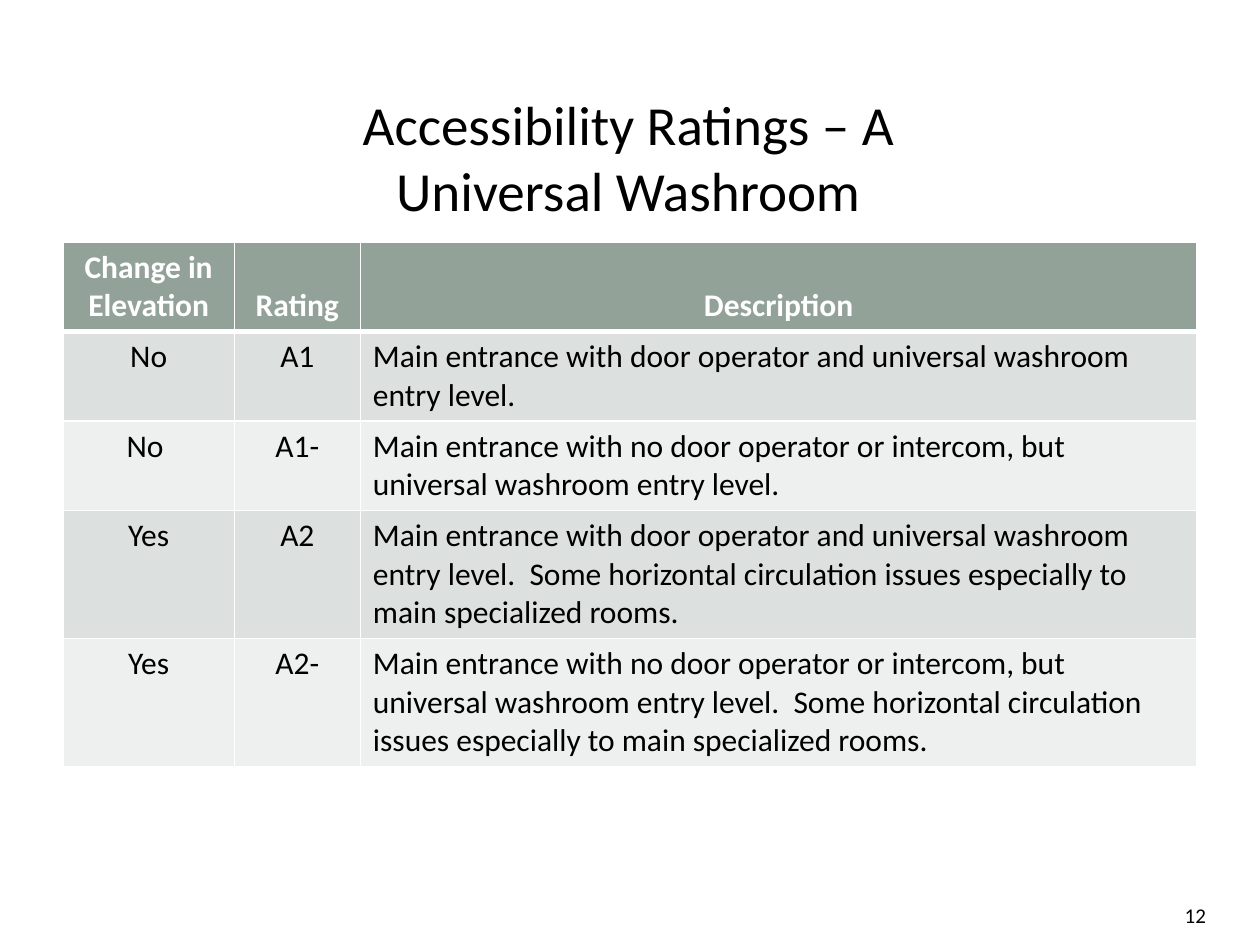
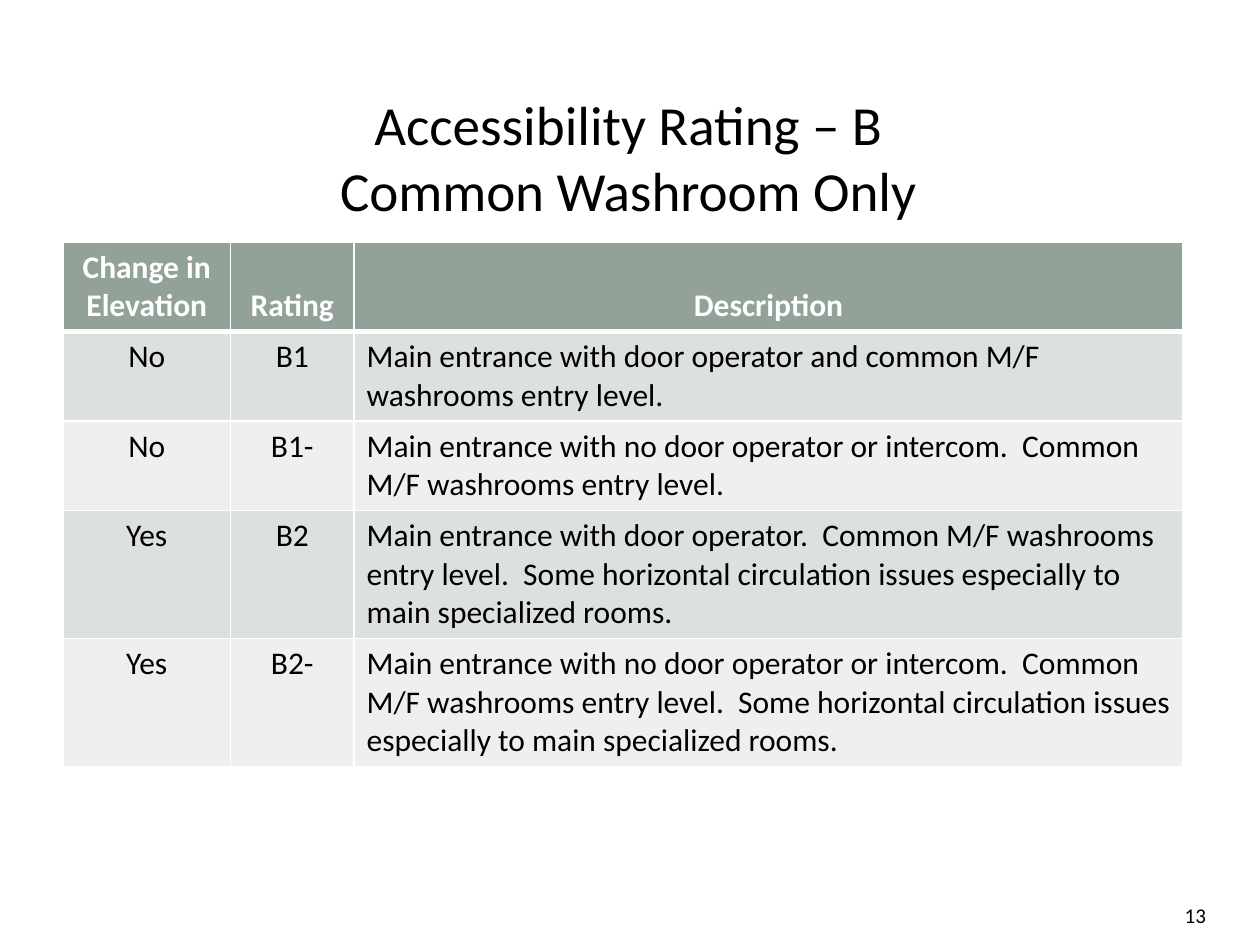
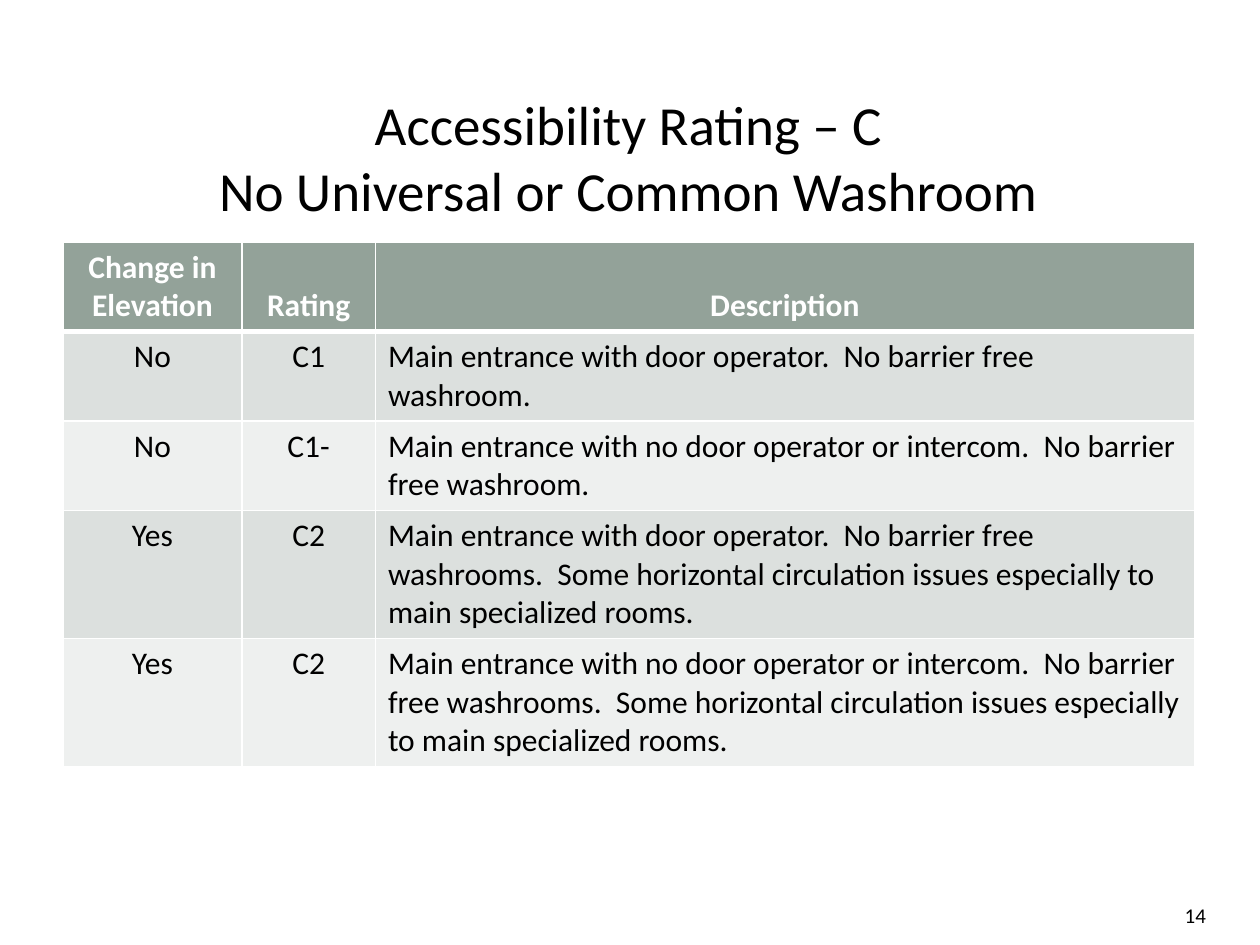
from dataclasses import dataclass

from lxml.etree import SubElement
from pptx import Presentation
from pptx.dml.color import RGBColor
from pptx.enum.text import MSO_ANCHOR, MSO_AUTO_SIZE, PP_ALIGN
from pptx.oxml.ns import qn
from pptx.util import Inches, Pt


@dataclass(frozen=True)
class Theme:
    """Colours and type sizes shared by all slides."""

    font: str = "Calibri"
    ink: str = "000000"
    paper: str = "FFFFFF"
    header: str = "93A299"
    bands: tuple = ("DCE0DE", "EEF0EF")
    title_size: float = 31.5
    table_size: float = 18
    number_size: float = 12
    border: float = 1
    header_border: float = 3


@dataclass(frozen=True)
class RatingSlide:
    """Content of one rating slide."""

    number: int
    title: tuple
    columns: tuple
    rows: tuple


THEME = Theme()
TITLE_BOX = (0.47, 0.67, 9.03, 1.14)
NUMBER_BOX = (8.5, 7, 1.17, 0.36)
TABLE_ORIGIN = (0.5, 1.92)
ROW_HEIGHTS = (0.7, 0.7, 0.7, 1, 1)
HEADINGS = ("Change in Elevation", "Rating", "Description")
CIRCULATION = "  Some horizontal circulation issues especially to main specialized rooms."
OPERATOR = "Main entrance with door operator"
NO_OPERATOR = "Main entrance with no door operator or intercom"
UNIVERSAL = "universal washroom entry level."
COMMON = "ommon M/F washrooms entry level."
NO_WASHROOM = ".  No barrier free washroom"

SLIDES = (
    RatingSlide(
        12, ("Accessibility Ratings – A", "Universal Washroom"), (1.36, 1, 6.64),
        (
            ("No", "A1", f"{OPERATOR} and {UNIVERSAL}"),
            ("No ", "A1-", f"{NO_OPERATOR}, but {UNIVERSAL}"),
            ("Yes", "A2", f"{OPERATOR} and {UNIVERSAL}{CIRCULATION}"),
            ("Yes", "A2-", f"{NO_OPERATOR}, but {UNIVERSAL}{CIRCULATION}"),
        ),
    ),
    RatingSlide(
        13, ("Accessibility Rating – B", "Common Washroom Only"), (1.33, 0.98, 6.58),
        (
            ("No", "B1", f"{OPERATOR} and c{COMMON}"),
            ("No", "B1-", f"{NO_OPERATOR}.  C{COMMON}"),
            ("Yes", "B2", f"{OPERATOR}.  C{COMMON}{CIRCULATION}"),
            ("Yes", "B2-", f"{NO_OPERATOR}.  C{COMMON}{CIRCULATION}"),
        ),
    ),
    RatingSlide(
        14, ("Accessibility Rating – C", "No Universal or Common Washroom"), (1.42, 1.06, 6.5),
        (
            ("No", "C1", f"{OPERATOR}{NO_WASHROOM}."),
            ("No", "C1-", f"{NO_OPERATOR}{NO_WASHROOM}."),
            ("Yes", "C2", f"{OPERATOR}{NO_WASHROOM}s.{CIRCULATION}"),
            ("Yes", "C2", f"{NO_OPERATOR}{NO_WASHROOM}s.{CIRCULATION}"),
        ),
    ),
)


def add_run(paragraph, text, size, color=THEME.ink, bold=False):
    """Append one formatted run to the paragraph."""
    run = paragraph.add_run()
    run.text = text
    run.font.name = THEME.font
    run.font.size = Pt(size)
    run.font.bold = bold
    run.font.color.rgb = RGBColor.from_string(color)


def set_borders(cell, top, bottom):
    """Draw the cell's four borders with the given top and bottom widths."""
    properties = cell._tc.get_or_add_tcPr()
    widths = {"L": THEME.border, "R": THEME.border, "T": top, "B": bottom}
    for side, width in widths.items():
        line = SubElement(properties, qn(f"a:ln{side}"), w=str(Pt(width)))
        fill = SubElement(line, qn("a:solidFill"))
        SubElement(fill, qn("a:srgbClr"), val=THEME.paper)


def format_cell(cell, text, row, column):
    """Fill one table cell according to its row and column."""
    is_header = row == 0
    top = THEME.header_border if row == 1 else THEME.border
    bottom = THEME.header_border if is_header else THEME.border
    set_borders(cell, top, bottom)
    cell.fill.solid()
    fill = THEME.header if is_header else THEME.bands[(row - 1) % 2]
    cell.fill.fore_color.rgb = RGBColor.from_string(fill)
    cell.vertical_anchor = MSO_ANCHOR.BOTTOM if is_header else MSO_ANCHOR.TOP
    paragraph = cell.text_frame.paragraphs[0]
    paragraph.alignment = PP_ALIGN.CENTER if is_header or column < 2 else PP_ALIGN.LEFT
    color = THEME.paper if is_header else THEME.ink
    add_run(paragraph, text, THEME.table_size, color, is_header)


def add_title(slide, lines, box):
    """Place the title placeholder and write its lines."""
    title = slide.shapes.title
    title.left, title.top, title.width, title.height = map(Inches, box)
    frame = title.text_frame
    frame.auto_size = MSO_AUTO_SIZE.NONE
    frame.vertical_anchor = MSO_ANCHOR.MIDDLE
    paragraph = frame.paragraphs[0]
    paragraph.alignment = PP_ALIGN.CENTER
    for index, line in enumerate(lines):
        if index:
            paragraph.add_line_break()
        add_run(paragraph, line, THEME.title_size)


def add_rating_table(slide, columns, rows, origin):
    """Add the rating table with its top left corner at the origin."""
    contents = (HEADINGS, *rows)
    box = (*origin, sum(columns), sum(ROW_HEIGHTS))
    table = slide.shapes.add_table(len(contents), len(columns), *map(Inches, box)).table
    for column, width in zip(table.columns, columns):
        column.width = Inches(width)
    for row, height in zip(table.rows, ROW_HEIGHTS):
        row.height = Inches(height)
    for row, texts in enumerate(contents):
        for column, text in enumerate(texts):
            format_cell(table.cell(row, column), text, row, column)


def add_slide_number(slide, number, box):
    """Write the slide number in the lower right box."""
    frame = slide.shapes.add_textbox(*map(Inches, box)).text_frame
    frame.word_wrap = True
    frame.vertical_anchor = MSO_ANCHOR.BOTTOM
    frame.margin_bottom = 0
    paragraph = frame.paragraphs[0]
    paragraph.alignment = PP_ALIGN.RIGHT
    add_run(paragraph, str(number), THEME.number_size)


def add_rating_slide(presentation, content):
    """Add one slide with title, rating table and number."""
    layout = presentation.slide_layouts.get_by_name("Title Only")
    slide = presentation.slides.add_slide(layout)
    add_title(slide, content.title, TITLE_BOX)
    add_rating_table(slide, content.columns, content.rows, TABLE_ORIGIN)
    add_slide_number(slide, content.number, NUMBER_BOX)


def main():
    """Build and save the presentation."""
    presentation = Presentation()
    presentation.slide_width = Inches(10)
    presentation.slide_height = Inches(7.5)
    for content in SLIDES:
        add_rating_slide(presentation, content)
    presentation.save("out.pptx")


if __name__ == "__main__":
    main()
